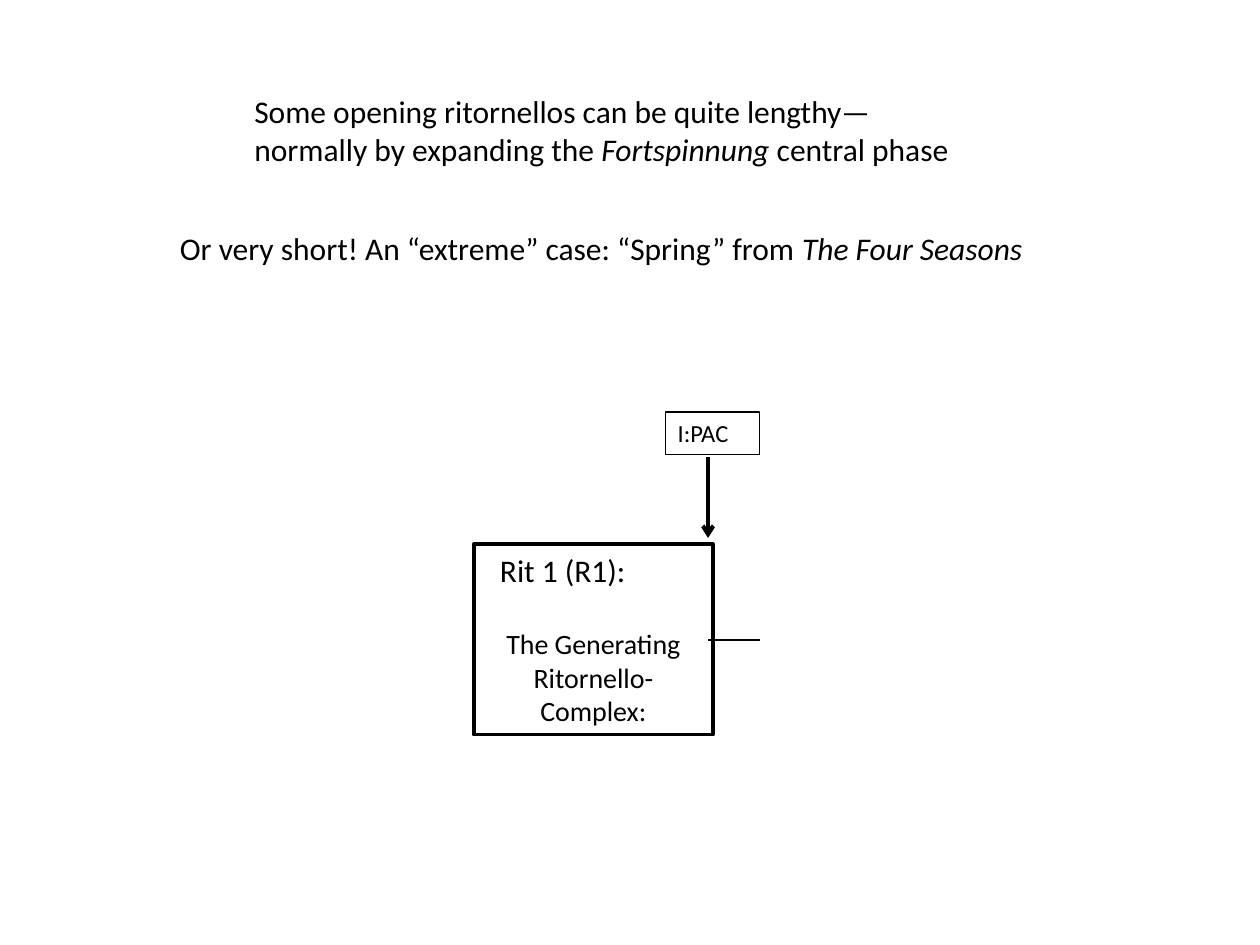
from dataclasses import dataclass

from lxml.etree import SubElement
from pptx import Presentation
from pptx.dml.color import RGBColor
from pptx.enum.shapes import MSO_CONNECTOR, MSO_SHAPE
from pptx.enum.text import MSO_ANCHOR, PP_ALIGN
from pptx.oxml.ns import qn
from pptx.util import Inches, Pt

COLORS = {"ink": "000000"}
FONT = "Calibri"


@dataclass
class Para:
    runs: list[str]
    size: int = 18
    align: PP_ALIGN = PP_ALIGN.LEFT
    before: int = 0
    indent: float = 0
    italic: int = -1


@dataclass
class Box:
    left: float
    top: float
    width: float
    height: float
    paras: list[Para]
    line: float = 0


@dataclass
class Line:
    x1: float
    y1: float
    x2: float
    y2: float
    width: float
    arrow: bool = False


LINES = [
    Line(5.62, 5.08, 6.03, 5.08, 0.75),
    Line(5.62, 3.63, 5.62, 4.27, 2.25, arrow=True),
]
BOXES = [
    Box(3.76, 4.32, 1.9, 1.51, [
        Para(["Rit 1 (R1):"], indent=0.11),
        Para(["The Generating"], 16, PP_ALIGN.CENTER, before=22),
        Para(["Ritornello-Complex:"], 16, PP_ALIGN.CENTER),
    ], line=2.25),
    Box(5.28, 3.27, 0.75, 0.34, [Para(["I:PAC"], 14)], line=0.75),
    Box(1.92, 0.68, 6.04, 0.71, [
        Para(["Some opening ritornellos can be quite lengthy—"]),
        Para(["normally by expanding the ", "Fortspinnung", " central phase"], italic=1),
    ]),
    Box(1.33, 1.77, 7.5, 0.42, [
        Para(["Or very short! An “extreme” case: “Spring” from ", "The Four Seasons"], italic=1),
    ]),
]


def ink() -> RGBColor:
    """Return the colour of text and lines."""
    return RGBColor.from_string(COLORS["ink"])


def add_line(s, line: Line) -> None:
    """Draw a straight line, with an arrowhead at its end if asked."""
    cx = s.shapes.add_connector(MSO_CONNECTOR.STRAIGHT, Inches(line.x1), Inches(line.y1),
                                Inches(line.x2), Inches(line.y2))
    cx.line.color.rgb = ink()
    cx.line.width = Pt(line.width)
    if line.arrow:
        SubElement(cx.line._get_or_add_ln(), qn("a:tailEnd"), type="arrow")
    SubElement(cx._element.spPr, qn("a:effectLst"))


def add_box(s, box: Box) -> None:
    """Draw a text box, or an outlined rectangle when it has a line."""
    at = [Inches(v) for v in (box.left, box.top, box.width, box.height)]
    if box.line:
        sp = s.shapes.add_shape(MSO_SHAPE.RECTANGLE, *at)
        sp.shadow.inherit = False
        sp.fill.background()
        sp.line.color.rgb = ink()
        sp.line.width = Pt(box.line)
    else:
        sp = s.shapes.add_textbox(*at)
    tf = sp.text_frame
    tf.word_wrap = True
    tf.vertical_anchor = MSO_ANCHOR.TOP
    for i, para in enumerate(box.paras):
        p = tf.add_paragraph() if i else tf.paragraphs[0]
        p.alignment = para.align
        p.space_before = Pt(para.before)
        p.font.name = FONT
        p.font.size = Pt(para.size)
        p.font.color.rgb = ink()
        if para.indent:
            p._p.get_or_add_pPr().set("marL", str(Inches(para.indent)))
        for j, text in enumerate(para.runs):
            r = p.add_run()
            r.text = text
            if j == para.italic:
                r.font.italic = True


def main() -> None:
    """Build the slide and save it."""
    prs = Presentation()
    prs.slide_width, prs.slide_height = Inches(10), Inches(7.5)
    s = prs.slides.add_slide(prs.slide_layouts[6])
    for line in LINES:
        add_line(s, line)
    for box in BOXES:
        add_box(s, box)
    prs.save("out.pptx")


if __name__ == "__main__":
    main()
